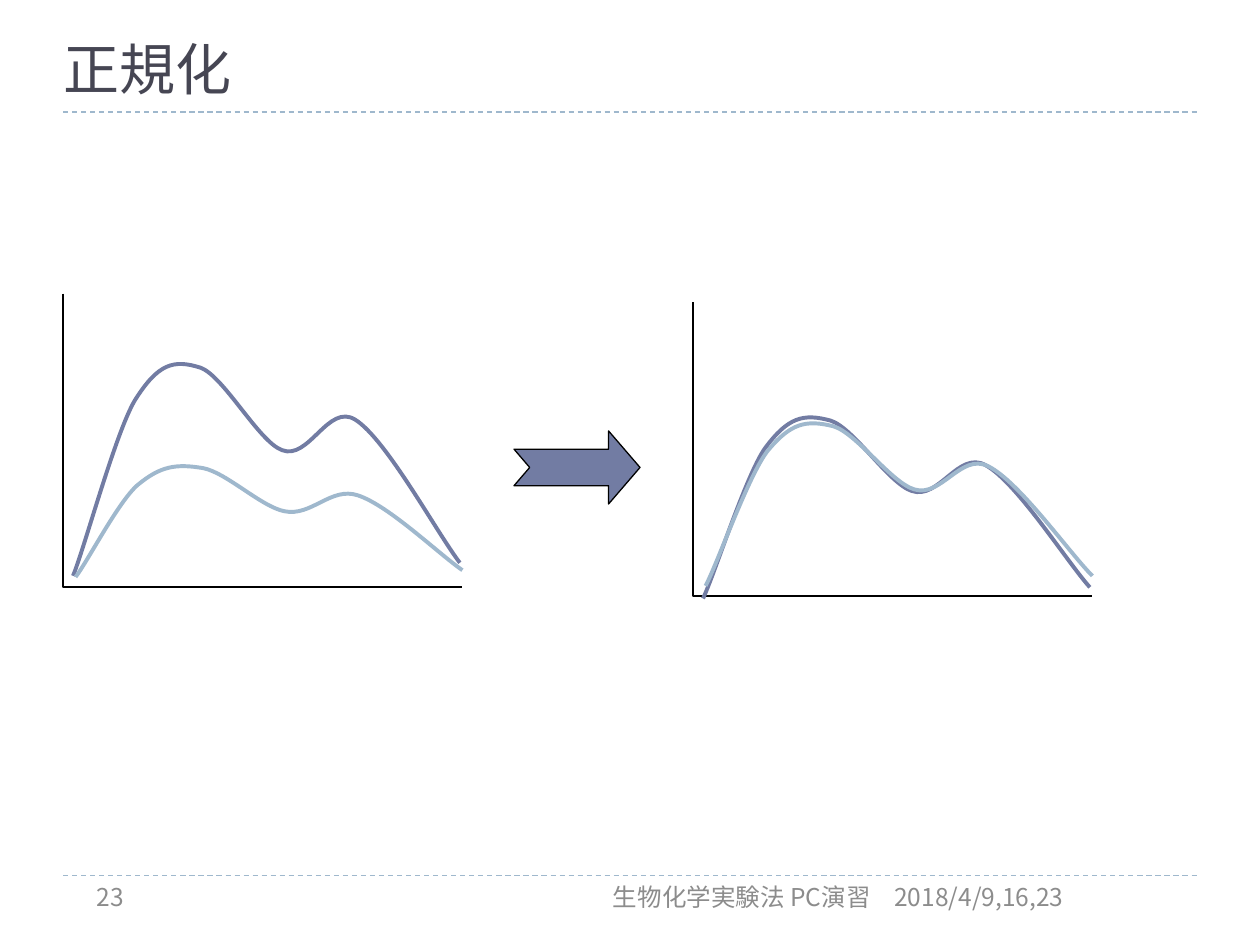
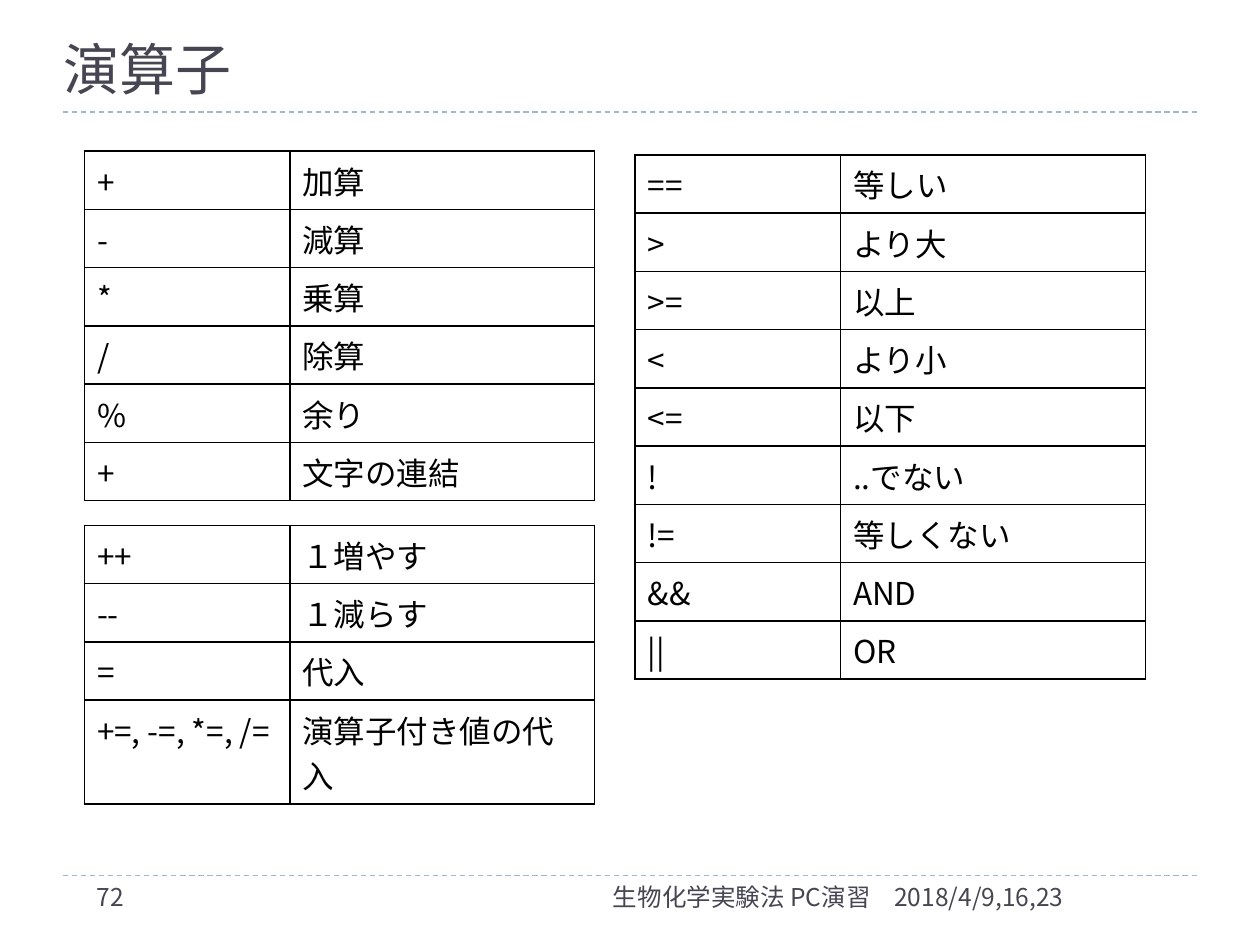
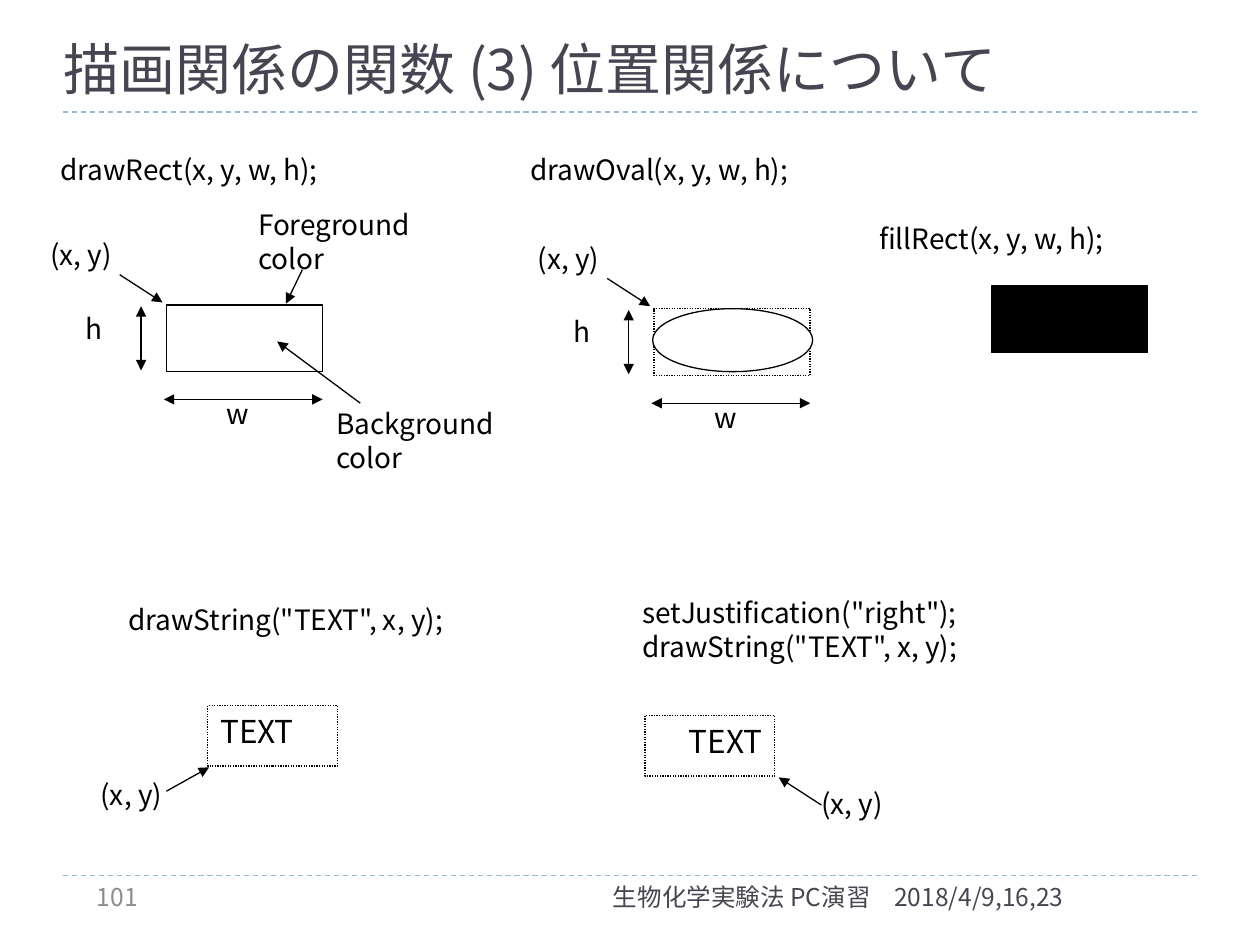
from dataclasses import dataclass
from itertools import product

from lxml import etree
from pptx import Presentation
from pptx import util as u
from pptx.dml.color import RGBColor
from pptx.enum import dml, shapes, text
from pptx.oxml.ns import qn


@dataclass(frozen=True)
class Theme:
    font: str = "Noto Sans CJK JP"
    title: str = "464653"
    muted: str = "8C8C8C"
    ink: str = "000000"
    paper: str = "FFFFFF"
    dark_curve: str = "727CA3"
    light_curve: str = "9FB8CD"
    title_size: int = 32
    table_size: int = 18
    label_size: int = 16
    footer_size: int = 14
    line_height: float = 1.45
    thin: float = 0.75
    border: float = 1
    thick: float = 2.25


THEME = Theme()
SHAPE = shapes.MSO_SHAPE
DASH = dml.MSO_LINE.DASH
DOTTED = dml.MSO_LINE.ROUND_DOT
ALIGN = text.PP_ALIGN

# The slide is a grid of 10 columns by 7.5 rows of square cells.
COLUMNS, ROWS = 10, 7.5
CELL = u.Inches(1)

# Bezier points of the two-peak signal, as shares of its width and height.
SIGNAL = [(0, 0), (.03, .13), (.11, .66), (.16, .81),
          (.22, .98), (.26, 1), (.33, .96),
          (.39, .92), (.48, .62), (.54, .58),
          (.61, .53), (.66, .80), (.73, .72),
          (.81, .63), (.94, .20), (1, .06)]

ARITHMETIC = [("+", "加算"), ("-", "減算"), ("*", "乗算"), ("/", "除算"),
              ("%", "余り"), ("+", "文字の連結")]
ASSIGNMENT = [("++", "１増やす"), ("--", "１減らす"), ("=", "代入"),
              ("+=, -=, *=, /=", "演算子付き値の代入")]
COMPARISON = [("==", "等しい"), (">", "より大"), (">=", "以上"),
              ("<", "より小"), ("<=", "以下"), ("!", "..でない"),
              ("!=", "等しくない"), ("&&", "AND"), ("||", "OR")]


def grid(*cells):
    return [round(c * CELL) for c in cells]


def rgb(color):
    return RGBColor.from_string(color)


def format_text(tf, size, color, align=ALIGN.LEFT):
    for p in tf.paragraphs:
        p.alignment = align
        for r in p.runs:
            r.font.size = u.Pt(size)
            r.font.color.rgb = rgb(color)
            r.font.name = THEME.font
            ea = etree.SubElement(r.font._element, qn("a:ea"))
            ea.set("typeface", THEME.font)


def format_line(line, color=THEME.ink, width=THEME.thin, dash=None):
    line.color.rgb = rgb(color)
    line.width = u.Pt(width)
    if dash:
        line.dash_style = dash


def format_shape(sp, fill=None, **line):
    sp.shadow.inherit = False
    if fill:
        sp.fill.solid()
        sp.fill.fore_color.rgb = rgb(fill)
    else:
        sp.fill.background()
    format_line(sp.line, **line)


def add_text(s, words, x, y, w, h, size=THEME.label_size, color=THEME.ink,
             align=ALIGN.JUSTIFY):
    tf = s.shapes.add_textbox(*grid(x, y, w, h)).text_frame
    tf.word_wrap = True
    tf.text = words
    format_text(tf, size, color, align)


def add_block(s, kind, x, y, w, h, fill=None, **line):
    sp = s.shapes.add_shape(kind, *grid(x, y, w, h))
    format_shape(sp, fill, **line)
    return sp


def add_line(s, start, end, ends=(), **line):
    """Draw a straight line; ends names the arrowheads, headEnd or tailEnd."""
    sp = s.shapes.add_connector(shapes.MSO_CONNECTOR.STRAIGHT,
                                *grid(*start, *end))
    format_line(sp.line, **line)
    for end_name in ends:
        etree.SubElement(sp.line._get_or_add_ln(),
                         qn(f"a:{end_name}")).set("type", "triangle")
    etree.SubElement(sp._element.spPr, qn("a:effectLst"))
    return sp


def add_pointer(s, start, end):
    add_line(s, start, end, ["tailEnd"])


def add_dimension(s, start, end):
    add_line(s, start, end, ["headEnd", "tailEnd"])


def add_outline(s, points, **line):
    first, *rest = [grid(*point) for point in points]
    builder = s.shapes.build_freeform(*first)
    builder.add_line_segments(rest, close=False)
    sp = builder.convert_to_shape()
    format_shape(sp, **line)
    return sp


def add_signal(s, x, base, height, color):
    """Draw the signal, turning each three outline points into one Bezier."""
    width = 3.07
    sp = add_outline(s, [(x + px * width, base - py * height)
                         for px, py in SIGNAL],
                     color=color, width=THEME.thick)
    route = next(sp._element.iter(qn("a:path")))
    steps = route.findall(qn("a:lnTo"))
    for i in range(0, len(steps), 3):
        bezier = etree.SubElement(route, qn("a:cubicBezTo"))
        for step in steps[i:i + 3]:
            bezier.append(step[0])
            route.remove(step)


def add_plot(s, x, y, dark, light):
    """Draw axes and two signals, each given as (baseline, height)."""
    w, h = 3.17, 2.33
    add_outline(s, [(x, y), (x, y + h), (x + w, y + h)])
    add_signal(s, x + .08, *dark, THEME.dark_curve)
    add_signal(s, x + .1, *light, THEME.light_curve)


def add_borders(cell):
    tc_pr = cell._tc.get_or_add_tcPr()
    for side in "LRTB":
        ln = etree.SubElement(tc_pr, qn(f"a:ln{side}"),
                              w=str(u.Pt(THEME.border)))
        fill = etree.SubElement(ln, qn("a:solidFill"))
        etree.SubElement(fill, qn("a:srgbClr"), val=THEME.ink)


def add_operators(s, x, y, rows, last_lines=1):
    """Draw an operator table whose last row holds last_lines text lines."""
    widths, padding = (1.63, 2.42), .1
    line = THEME.table_size * THEME.line_height / 72
    heights = [line + padding] * (len(rows) - 1) + [last_lines * line + padding]
    table = s.shapes.add_table(
        len(rows), len(widths),
        *grid(x, y, sum(widths), sum(heights))).table
    table.first_row = table.horz_banding = False
    for column, width in zip(table.columns, grid(*widths)):
        column.width = width
    for row, height in zip(table.rows, grid(*heights)):
        row.height = height
    for i, j in product(range(len(rows)), range(len(widths))):
        cell = table.cell(i, j)
        add_borders(cell)
        cell.fill.background()
        cell.text = rows[i][j]
        format_text(cell.text_frame, THEME.table_size, THEME.ink)


def add_sized_box(s, x, y, dash=None):
    """Draw a box with its corner, width and height labelled."""
    w, h = 1.24, .53
    add_block(s, SHAPE.RECTANGLE, x, y, w, h, THEME.paper, dash=dash)
    add_text(s, "(x, y)", x - 1.02, y - .58, 1.12, .54)
    add_pointer(s, (x - .37, y - .24), (x - .03, y - .02))
    add_text(s, "h", x - .74, y, .77, .54)
    add_dimension(s, (x - .2, y + .01), (x - .2, y + h - .01))
    add_text(s, "w", x + .38, y + .68, .77, .54)
    add_dimension(s, (x - .02, y + .75), (x + w, y + .75))


def add_text_frame(s, x, y, align):
    sp = add_block(s, SHAPE.RECTANGLE, x, y, 1.03, .48, dash=DOTTED)
    tf = sp.text_frame
    tf.vertical_anchor = text.MSO_ANCHOR.TOP
    tf.text = "TEXT"
    format_text(tf, THEME.table_size, THEME.ink, align)


def prepare_layout(prs):
    layout = prs.slide_layouts.get_by_name("Title Only")
    title = layout.placeholders[0]
    title.left, title.top, title.width, title.height = grid(.5, .17, 9, .64)
    tf = title.text_frame
    tf.margin_left = tf.margin_top = tf.margin_right = tf.margin_bottom = 0
    tf.vertical_anchor = text.MSO_ANCHOR.BOTTOM
    tf.auto_size = text.MSO_AUTO_SIZE.NONE
    return layout


def share_rules(s):
    """Draw the title and footer rules and move them to the layout."""
    for y in (.89, 6.95):
        rule = add_line(s, (.5, y), (COLUMNS - .5, y),
                        color=THEME.light_curve, dash=DASH)
        s.slide_layout.shapes._spTree.append(rule._element)


def add_slide(prs, layout, title, number, footer_color, number_color):
    s = prs.slides.add_slide(layout)
    s.shapes.title.text_frame.text = title
    format_text(s.shapes.title.text_frame, THEME.title_size, THEME.title)
    footers = [("2018/4/9,16,23", 7, 2.5, footer_color, ALIGN.LEFT),
               ("生物化学実験法 PC演習", 3.17, 3.84, footer_color, ALIGN.RIGHT),
               (number, .67, 2.17, number_color, ALIGN.LEFT)]
    for words, x, w, color, align in footers:
        add_text(s, words, x, 6.95, w, .4, THEME.footer_size, color, align)
    return s


def draw_normalization(s):
    add_plot(s, .5, 2.33, dark=(4.57, 1.72), light=(4.58, .9))
    add_plot(s, 5.5, 2.4, dark=(4.75, 1.47), light=(4.65, 1.32))
    arrow = add_block(s, SHAPE.NOTCHED_RIGHT_ARROW, 4.08, 3.42, 1, .58,
                      THEME.dark_curve)
    arrow.adjustments[1] = .43


def draw_operators(s):
    add_operators(s, .67, 1.2, ARITHMETIC)
    add_operators(s, 5.04, 1.23, COMPARISON)
    add_operators(s, .67, 4.17, ASSIGNMENT, last_lines=2)


def draw_positions(s):
    add_text(s, "drawRect(x, y, w, h);", .38, 1.16, 2.68, .54)
    add_sized_box(s, 1.32, 2.42)
    add_text(s, "Foreground color", 1.95, 1.6, 1.65, .59)
    add_pointer(s, (2.4, 2.14), (2.27, 2.41))
    add_text(s, "Background color", 2.57, 3.18, 1.67, .59)
    add_pointer(s, (2.86, 3.2), (2.2, 2.71))

    add_text(s, "drawOval(x, y, w, h);", 4.11, 1.16, 2.67, .54)
    add_sized_box(s, 5.19, 2.45, DOTTED)
    add_block(s, SHAPE.OVAL, 5.18, 2.45, 1.27, .5, THEME.paper)

    add_text(s, "fillRect(x, y, w, h);", 6.88, 1.71, 2.62, .54)
    add_block(s, SHAPE.RECTANGLE, 7.87, 2.27, 1.24, .53, THEME.ink)

    add_text(s, 'drawString("TEXT", x, y);', .92, 4.73, 3.38, .54)
    add_text_frame(s, 1.65, 5.6, ALIGN.LEFT)
    add_text(s, "(x, y)", .7, 6.12, 1.17, .54)
    add_pointer(s, (1.32, 6.28), (1.66, 6.09))

    add_text(s, 'setJustification("right");\ndrawString("TEXT", x, y);',
             5, 4.68, 3.34, .77)
    add_text_frame(s, 5.12, 5.68, ALIGN.RIGHT)
    add_text(s, "(x, y)", 6.42, 6.19, 1.31, .54)
    add_pointer(s, (6.52, 6.39), (6.18, 6.17))


def main():
    prs = Presentation()
    prs.slide_width, prs.slide_height = grid(COLUMNS, ROWS)
    layout = prepare_layout(prs)

    s = add_slide(prs, layout, "正規化", "23", THEME.muted, THEME.muted)
    share_rules(s)
    draw_normalization(s)

    s = add_slide(prs, layout, "演算子", "72", THEME.title, THEME.title)
    draw_operators(s)

    s = add_slide(prs, layout, "描画関係の関数 (3) 位置関係について", "101",
                  THEME.title, THEME.muted)
    draw_positions(s)

    prs.save("out.pptx")


if __name__ == "__main__":
    main()
